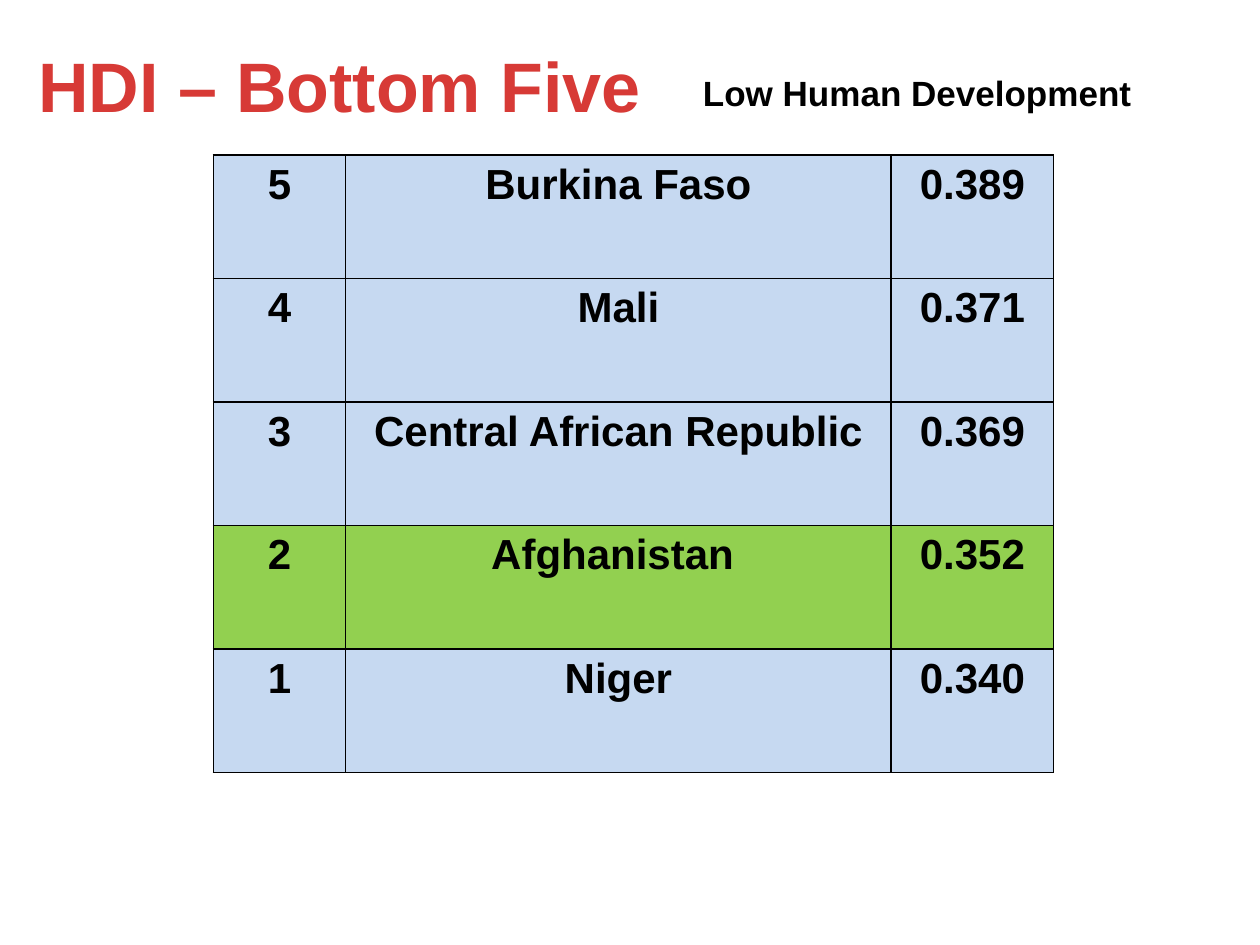
from dataclasses import dataclass

from lxml import etree
from pptx import Presentation
from pptx.dml.color import RGBColor
from pptx.enum import text
from pptx.oxml import ns
from pptx.util import Pt

TITLE = "HDI – Bottom Five"
SUBTITLE = "Low Human Development"
COUNTRIES = [
    ("5", "Burkina Faso", "0.389"),
    ("4", "Mali", "0.371"),
    ("3", "Central African Republic", "0.369"),
    ("2", "Afghanistan ", "0.352"),
    ("1", "Niger", "0.340"),
]
HIGHLIGHTED_RANK = "2"

TITLE_BOX = (0, 20.9, 388, 55.4)
SUBTITLE_BOX = (354.2, 37.4, 340, 31.7)
TABLE_LEFT, TABLE_TOP = 121.9, 88.6
COLUMN_WIDTHS = (75.6, 311.8, 92.9)
ROW_HEIGHT = 70.56


@dataclass(frozen=True)
class Theme:
    font: str = "Arial"
    title_size: int = 40
    subtitle_size: int = 20
    table_size: int = 24
    title_color: str = "D73A36"
    text_color: str = "000000"
    row_fill: str = "C6D9F1"
    highlight_fill: str = "92D050"
    border_color: str = "000000"
    border_width: int = 1


THEME = Theme()


def write_text(text_frame, content, size, color):
    text_frame.text = content
    paragraph = text_frame.paragraphs[0]
    paragraph.alignment = text.PP_ALIGN.CENTER
    font = paragraph.runs[0].font
    font.name, font.size, font.bold = THEME.font, Pt(size), True
    font.color.rgb = RGBColor.from_string(color)


def add_heading(slide, box, content, size, color):
    text_frame = slide.shapes.add_textbox(*map(Pt, box)).text_frame
    text_frame.word_wrap = True
    text_frame.auto_size = text.MSO_AUTO_SIZE.SHAPE_TO_FIT_TEXT
    write_text(text_frame, content, size, color)


def add_borders(cell):
    """Put the four border lines before the fill, as the file format requires."""
    properties = cell._tc.get_or_add_tcPr()
    for position, side in enumerate(("lnL", "lnR", "lnT", "lnB")):
        line = etree.Element(ns.qn(f"a:{side}"), w=str(Pt(THEME.border_width)))
        fill = etree.SubElement(line, ns.qn("a:solidFill"))
        etree.SubElement(fill, ns.qn("a:srgbClr"), val=THEME.border_color)
        properties.insert(position, line)


def add_country_table(slide):
    table = slide.shapes.add_table(
        len(COUNTRIES), len(COLUMN_WIDTHS), Pt(TABLE_LEFT), Pt(TABLE_TOP),
        Pt(sum(COLUMN_WIDTHS)), Pt(ROW_HEIGHT * len(COUNTRIES)),
    ).table
    table.first_row = table.horz_banding = False
    for column, width in zip(table.columns, COLUMN_WIDTHS):
        column.width = Pt(width)
    for row, country in zip(table.rows, COUNTRIES):
        row.height = Pt(ROW_HEIGHT)
        highlighted = country[0] == HIGHLIGHTED_RANK
        fill_color = THEME.highlight_fill if highlighted else THEME.row_fill
        for cell, content in zip(row.cells, country):
            write_text(cell.text_frame, content, THEME.table_size, THEME.text_color)
            cell.fill.solid()
            cell.fill.fore_color.rgb = RGBColor.from_string(fill_color)
            add_borders(cell)


def main():
    presentation = Presentation()
    presentation.slide_width, presentation.slide_height = Pt(720), Pt(540)
    slide = presentation.slides.add_slide(presentation.slide_layouts[6])
    add_heading(slide, TITLE_BOX, TITLE, THEME.title_size, THEME.title_color)
    add_country_table(slide)
    add_heading(slide, SUBTITLE_BOX, SUBTITLE, THEME.subtitle_size, THEME.text_color)
    presentation.save("out.pptx")


if __name__ == "__main__":
    main()
